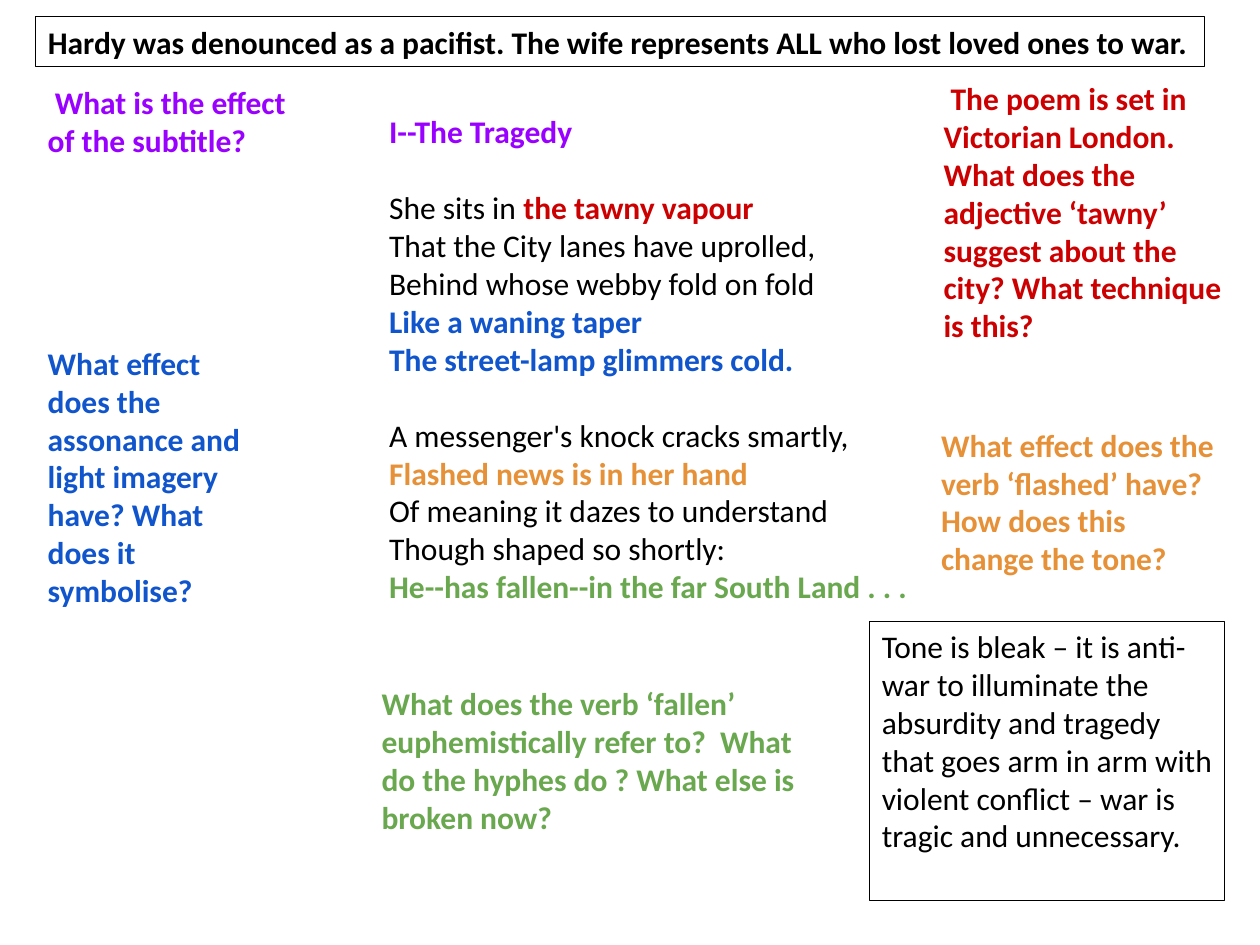
from dataclasses import dataclass

from pptx import Presentation
from pptx.dml.color import RGBColor
from pptx.enum.text import MSO_ANCHOR, MSO_AUTO_SIZE, PP_ALIGN
from pptx.util import Inches, Pt

BLACK = RGBColor(0x00, 0x00, 0x00)
PURPLE = RGBColor(0x99, 0x00, 0xFF)
RED = RGBColor(0xCC, 0x00, 0x00)
BLUE = RGBColor(0x11, 0x55, 0xCC)
ORANGE = RGBColor(0xE6, 0x91, 0x38)
GREEN = RGBColor(0x6A, 0xA8, 0x4F)

FONT, SIZE = "Calibri", Pt(18)
LINE_GAP = Pt(22)  # one line of text at this size


@dataclass
class Note:
    text: str
    left: float
    top: float
    width: float
    height: float
    color: RGBColor = BLACK
    bold: bool = True
    framed: bool = False


HEADER = Note("Hardy was denounced as a pacifist. The wife represents ALL who lost "
              "loved ones to war.", 0.28, 0.13, 9.28, 0.4, framed=True)

NOTES = [
    Note("What effect does the verb ‘flashed’ have? How does this change the tone?",
         7.37, 3.28, 2.41, 1.4, ORANGE),
    Note(" What is the effect of the subtitle?", 0.28, 0.56, 2.31, 0.99, PURPLE),
    Note(" The poem is set in Victorian London. What does the adjective ‘tawny’ "
         "suggest about the city? What technique is this?", 7.39, 0.53, 2.41, 2.2, RED),
    Note("What effect does the assonance and light imagery have? What does it symbolise?",
         0.28, 2.63, 1.89, 2.3, BLUE),
    Note("What does the verb ‘fallen’ euphemistically refer to?  What do the hyphes do ? "
         "What else is broken now?", 2.93, 5.33, 3.69, 2.74, GREEN),
    Note("Tone is bleak – it is anti-war to illuminate the absurdity and tragedy that goes "
         "arm in arm with violent conflict – war is tragic and unnecessary.",
         6.9, 4.93, 2.82, 2.22, bold=False, framed=True),
]

# Stanzas hold lines, lines hold (text, colour) pieces; coloured pieces are bold
POEM = [
    [[("I--The Tragedy", PURPLE)]],
    [
        [("She sits in ", BLACK), ("the tawny vapour", RED)],
        [("That the City lanes have uprolled,", BLACK)],
        [("Behind whose webby fold on fold", BLACK)],
        [("Like a waning taper", BLUE)],
        [("The street-lamp glimmers cold.", BLUE)],
    ],
    [
        [("A messenger's knock cracks smartly,", BLACK)],
        [("Flashed news is in her hand", ORANGE)],
        [("Of meaning it dazes to understand", BLACK)],
        [("Though shaped so shortly:", BLACK)],
        [("He--has fallen--in the far South Land . . .", GREEN)],
    ],
]


def style_run(r, color: RGBColor, bold: bool) -> None:
    r.font.name, r.font.size = FONT, SIZE
    r.font.bold = bold
    r.font.color.rgb = color


def fill_note(sp, note: Note) -> None:
    sp.left, sp.top = Inches(note.left), Inches(note.top)
    sp.width, sp.height = Inches(note.width), Inches(note.height)
    tf = sp.text_frame
    tf.word_wrap = True
    tf.auto_size = MSO_AUTO_SIZE.NONE
    tf.vertical_anchor = MSO_ANCHOR.TOP
    tf.margin_left = tf.margin_right = Inches(0.1)
    tf.margin_top = tf.margin_bottom = Inches(0.05 if note.framed else 0.1)
    tf.text = note.text
    p = tf.paragraphs[0]
    p.alignment = PP_ALIGN.LEFT
    style_run(p.runs[0], note.color, note.bold)
    if note.framed:
        sp.line.color.rgb = BLACK
        sp.line.width = Pt(0.75)


def add_poem(slide) -> None:
    sp = slide.shapes.add_textbox(Inches(2.99), Inches(0.81), Inches(5.03), Inches(4.37))
    tf = sp.text_frame
    tf.word_wrap = True
    tf.vertical_anchor = MSO_ANCHOR.MIDDLE
    tf.margin_left = tf.margin_right = tf.margin_top = Inches(0.1)
    tf.margin_bottom = Inches(0.4)
    for i, stanza in enumerate(POEM):
        p = tf.add_paragraph() if i else tf.paragraphs[0]
        if i:
            p.space_before = LINE_GAP
        for j, line in enumerate(stanza):
            if j:
                p.add_line_break()
            for text, color in line:
                r = p.add_run()
                r.text = text
                style_run(r, color, color != BLACK)


def main() -> None:
    prs = Presentation()
    prs.slide_width, prs.slide_height = Inches(10), Inches(7.5)
    slide = prs.slides.add_slide(prs.slide_layouts[5])

    # Header, poem, then the notes around it
    fill_note(slide.shapes.title, HEADER)
    add_poem(slide)
    for note in NOTES:
        fill_note(slide.shapes.add_textbox(0, 0, 0, 0), note)

    prs.save("out.pptx")


if __name__ == "__main__":
    main()
